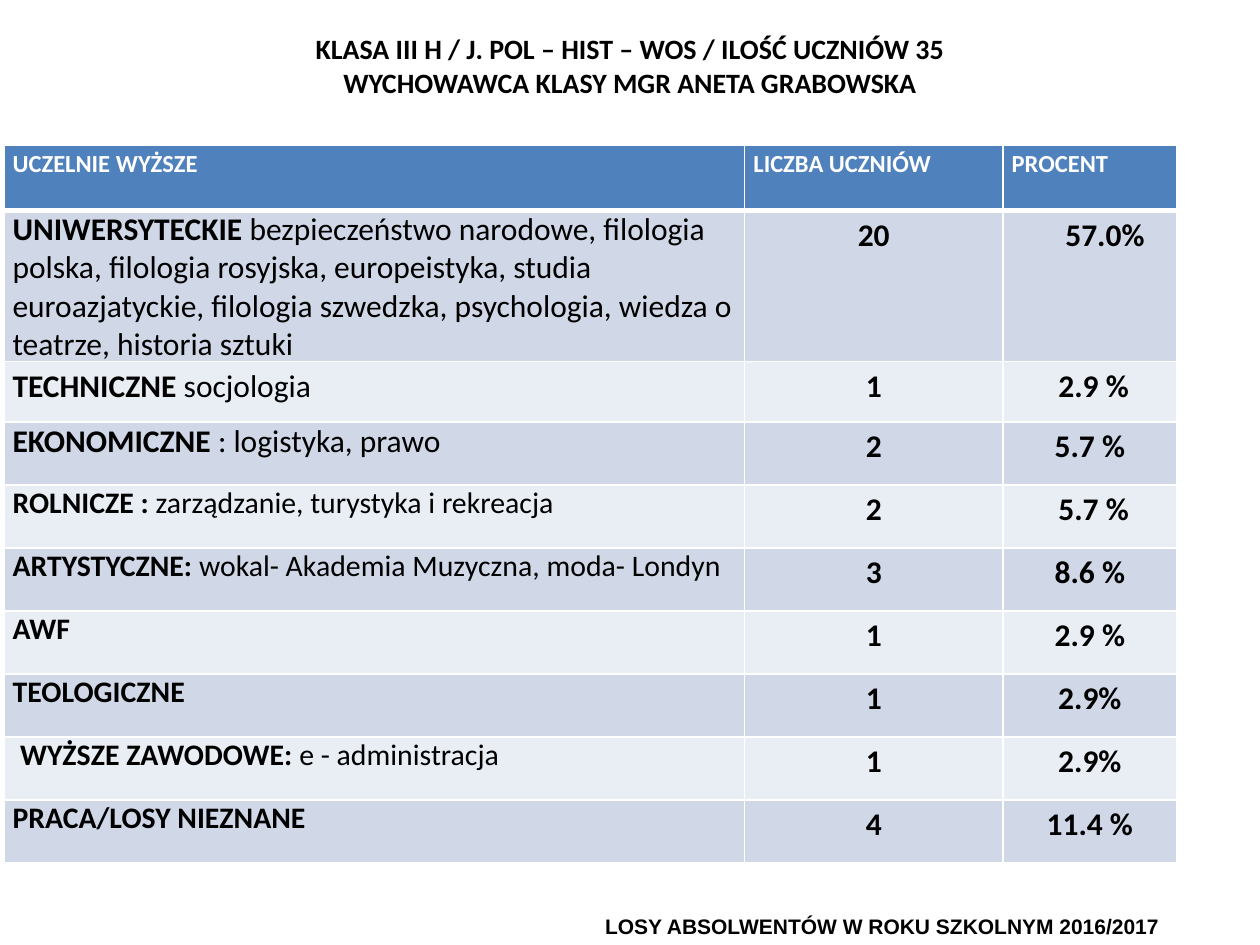
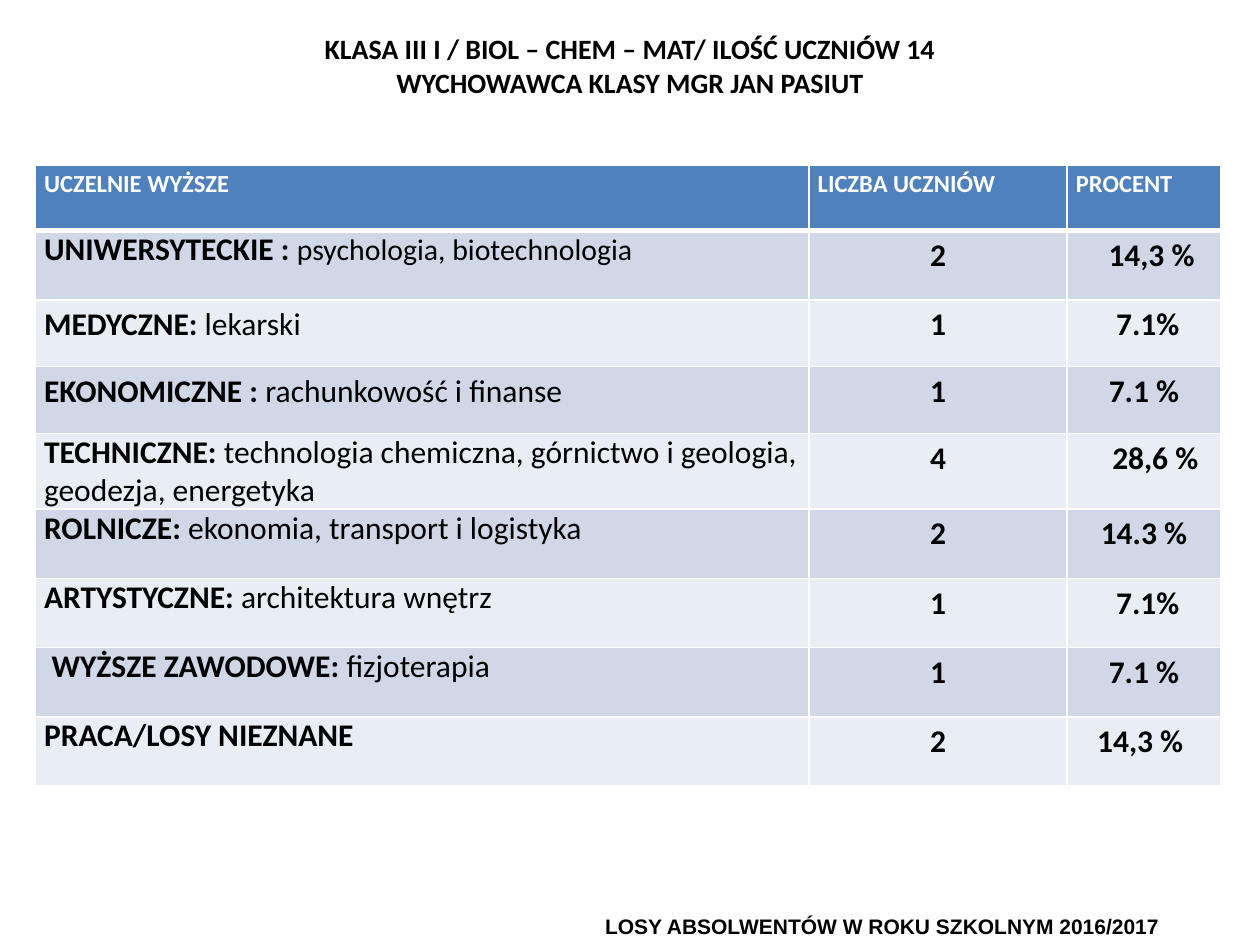
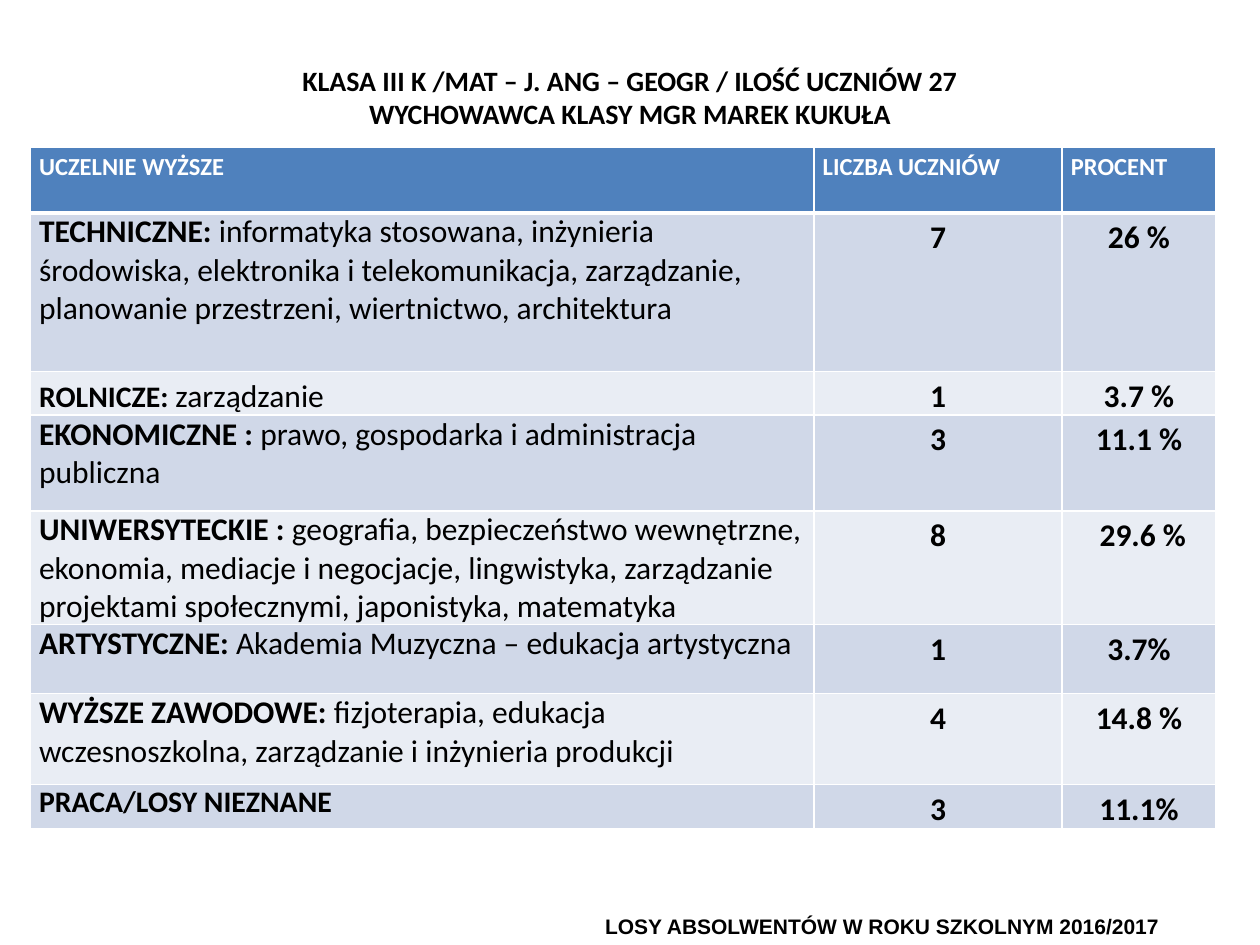
from dataclasses import dataclass

from lxml import etree
from pptx import Presentation
from pptx.dml.color import RGBColor
from pptx.enum.text import MSO_ANCHOR, PP_ALIGN
from pptx.oxml.ns import qn
from pptx.util import Inches, Pt

LEFT, CENTER, RIGHT = PP_ALIGN.LEFT, PP_ALIGN.CENTER, PP_ALIGN.RIGHT
MIDDLE, BOTTOM = MSO_ANCHOR.MIDDLE, MSO_ANCHOR.BOTTOM

SLIDE_WIDTH, SLIDE_HEIGHT = 10, 7.5
BLANK_LAYOUT = 6
TEXT, WHITE, HEADER = "000000", "FFFFFF", "4F81BD"
BANDS = ("D0D8E8", "E9EDF4")
CELL_MARGIN = 0.07
HEADER_HEIGHT = 0.52
LOOSE = 1.15
COLUMN_TITLES = ("UCZELNIE WYŻSZE", "LICZBA UCZNIÓW", "PROCENT")
FOOTER = "LOSY ABSOLWENTÓW W ROKU SZKOLNYM 2016/2017"


@dataclass
class Row:
    """One kind of school; nudges move a text right by that many inches."""
    height: float
    name: str
    detail: str
    count: str
    percent: str
    name_size: int = 18
    detail_size: int = 18
    spacing: float = 1.0
    name_nudge: float = 0
    percent_nudge: float = 0


@dataclass
class ClassReport:
    title: str
    title_middle: float
    left: float
    top: float
    columns: tuple
    rows: list


SMALL = {"name_size": 17, "detail_size": 17}

REPORTS = [
    ClassReport(
        "KLASA III H / J. POL – HIST – WOS / ILOŚĆ UCZNIÓW 35\vWYCHOWAWCA KLASY MGR ANETA GRABOWSKA",
        0.52, 0.03, 1.15, (5.88, 2.05, 1.38),
        [
            Row(1.2, "UNIWERSYTECKIE ",
                "bezpieczeństwo narodowe, filologia polska, filologia rosyjska, europeistyka, "
                "studia euroazjatyckie, filologia szwedzka, psychologia, wiedza o teatrze, "
                "historia sztuki", "20", "57.0%", percent_nudge=0.24),
            Row(0.48, "TECHNICZNE ", "socjologia", "1", "2.9 %", spacing=LOOSE, percent_nudge=0.06),
            Row(0.5, "EKONOMICZNE ", ": logistyka, prawo", "2", "5.7 %"),
            Row(0.5, "ROLNICZE : ", "zarządzanie, turystyka i rekreacja", "2", "5.7 %",
                percent_nudge=0.06, **SMALL),
            Row(0.5, "ARTYSTYCZNE: ", "wokal- Akademia Muzyczna, moda- Londyn", "3", "8.6 %", **SMALL),
            Row(0.5, "AWF", "", "1", "2.9 %", **SMALL),
            Row(0.5, "TEOLOGICZNE", "", "1", "2.9%", **SMALL),
            Row(0.5, "WYŻSZE ZAWODOWE: ", "e - administracja", "1", "2.9%", name_nudge=0.06, **SMALL),
            Row(0.5, "PRACA/LOSY NIEZNANE", "", "4", "11.4 %", **SMALL),
        ]),
    ClassReport(
        "KLASA III I / BIOL – CHEM – MAT/ ILOŚĆ UCZNIÓW 14\vWYCHOWAWCA KLASY MGR JAN PASIUT",
        0.52, 0.28, 1.31, (6.14, 2.05, 1.22),
        [
            Row(0.55, "UNIWERSYTECKIE : ", "psychologia, biotechnologia", "2", "14,3 %",
                detail_size=17, percent_nudge=0.12),
            Row(0.53, "MEDYCZNE: ", "lekarski", "1", "7.1%", spacing=LOOSE, percent_nudge=0.06),
            Row(0.53, "EKONOMICZNE : ", "rachunkowość i finanse", "1", "7.1 %", spacing=LOOSE),
            Row(0.6, "TECHNICZNE: ",
                "technologia chemiczna, górnictwo i geologia, geodezja, energetyka",
                "4", "28,6 %", percent_nudge=0.18),
            Row(0.55, "ROLNICZE: ", "ekonomia, transport i logistyka", "2", "14.3 %"),
            Row(0.55, "ARTYSTYCZNE: ", "architektura wnętrz", "1", "7.1%", percent_nudge=0.06),
            Row(0.55, "WYŻSZE ZAWODOWE: ", "fizjoterapia", "1", "7.1 %", name_nudge=0.06),
            Row(0.55, "PRACA/LOSY NIEZNANE", "", "2", "14,3 %", percent_nudge=-0.06),
        ]),
    ClassReport(
        "KLASA III K /MAT – J. ANG – GEOGR / ILOŚĆ UCZNIÓW 27\vWYCHOWAWCA KLASY MGR MAREK KUKUŁA",
        0.77, 0.24, 1.17, (6.22, 1.97, 1.22),
        [
            Row(1.26, "TECHNICZNE: ",
                "informatyka stosowana, inżynieria środowiska, elektronika i telekomunikacja, "
                "zarządzanie, planowanie przestrzeni, wiertnictwo, architektura", "7", "26 %"),
            Row(0.34, "ROLNICZE: ", "zarządzanie", "1", "3.7 %", name_size=17, spacing=LOOSE),
            Row(0.76, "EKONOMICZNE : ", "prawo, gospodarka i administracja publiczna", "3", "11.1 %"),
            Row(0.9, "UNIWERSYTECKIE : ",
                "geografia, bezpieczeństwo wewnętrzne, ekonomia, mediacje i negocjacje, "
                "lingwistyka, zarządzanie projektami społecznymi, japonistyka, matematyka",
                "8", "29.6 %", percent_nudge=0.06),
            Row(0.55, "ARTYSTYCZNE: ", "Akademia Muzyczna – edukacja artystyczna", "1", "3.7%"),
            Row(0.72, "WYŻSZE ZAWODOWE: ",
                "fizjoterapia, edukacja wczesnoszkolna, zarządzanie i inżynieria produkcji",
                "4", "14.8 %"),
            Row(0.35, "PRACA/LOSY NIEZNANE", "", "3", "11.1%", name_size=17),
        ]),
]


def color(value):
    return RGBColor.from_string(value)


def set_font(font, size, name="Calibri", bold=True, fill=TEXT):
    for attribute, value in {"size": Pt(size), "name": name, "bold": bold}.items():
        setattr(font, attribute, value)
    font.color.rgb = color(fill)


def add_label(slide, text, left, top, width, height, align, anchor, size, name="Calibri"):
    frame = slide.shapes.add_textbox(*map(Inches, (left, top, width, height))).text_frame
    frame.word_wrap = True
    frame.vertical_anchor = anchor
    paragraph = frame.paragraphs[0]
    paragraph.text = text
    paragraph.alignment = align
    for run in paragraph.runs:
        set_font(run.font, size, name)


def add_borders(cell, bottom):
    properties = cell._tc.get_or_add_tcPr()
    for side, width in {"L": 1, "R": 1, "T": 1, "B": bottom}.items():
        line = etree.SubElement(properties, qn(f"a:ln{side}"), w=str(Pt(width)))
        fill = etree.SubElement(line, qn("a:solidFill"))
        etree.SubElement(fill, qn("a:srgbClr"), val=WHITE)


def fill_cell(cell, runs, fill, align=LEFT, spacing=LOOSE, nudge=0, bottom=1, text_fill=TEXT):
    """Write runs of (text, size, bold) into a bordered, filled cell."""
    add_borders(cell, bottom)
    cell.fill.solid()
    cell.fill.fore_color.rgb = color(fill)
    margins = {"margin_left": CELL_MARGIN + max(nudge, 0),
               "margin_right": CELL_MARGIN + max(-nudge, 0),
               "margin_top": 0, "margin_bottom": 0}
    for attribute, value in margins.items():
        setattr(cell, attribute, Inches(value))
    paragraph = cell.text_frame.paragraphs[0]
    paragraph.alignment = align
    paragraph.line_spacing = spacing
    for text, size, bold in runs:
        if text:
            run = paragraph.add_run()
            run.text = text
            set_font(run.font, size, bold=bold, fill=text_fill)


def add_report_table(slide, report):
    heights = [HEADER_HEIGHT] + [row.height for row in report.rows]
    table = slide.shapes.add_table(
        len(heights), len(report.columns), Inches(report.left), Inches(report.top),
        Inches(sum(report.columns)), Inches(sum(heights))).table
    for column, width in zip(table.columns, report.columns):
        column.width = Inches(width)
    for table_row, height in zip(table.rows, heights):
        table_row.height = Inches(height)
    for column, title in enumerate(COLUMN_TITLES):
        fill_cell(table.cell(0, column), [(title, 14, True)], HEADER, bottom=3, text_fill=WHITE)
    for index, row in enumerate(report.rows):
        band = BANDS[index % 2]
        name, count, percent = table.rows[index + 1].cells
        fill_cell(name, [(row.name, row.name_size, True), (row.detail, row.detail_size, False)],
                  band, spacing=row.spacing, nudge=row.name_nudge)
        fill_cell(count, [(row.count, 18, True)], band, CENTER)
        fill_cell(percent, [(row.percent, 18, True)], band, CENTER, nudge=row.percent_nudge)


def add_report_slide(presentation, report):
    slide = presentation.slides.add_slide(presentation.slide_layouts[BLANK_LAYOUT])
    title_height = 0.7
    add_label(slide, report.title, 0.05 * SLIDE_WIDTH, report.title_middle - title_height / 2,
              0.9 * SLIDE_WIDTH, title_height, CENTER, MIDDLE, 16)
    footer_height = 0.4
    add_label(slide, FOOTER, 0.4 * SLIDE_WIDTH, SLIDE_HEIGHT - footer_height,
              0.53 * SLIDE_WIDTH, footer_height, RIGHT, BOTTOM, 12, "Arial")
    add_report_table(slide, report)


def main():
    presentation = Presentation()
    presentation.slide_width = Inches(SLIDE_WIDTH)
    presentation.slide_height = Inches(SLIDE_HEIGHT)
    for report in REPORTS:
        add_report_slide(presentation, report)
    presentation.save("out.pptx")


if __name__ == "__main__":
    main()
